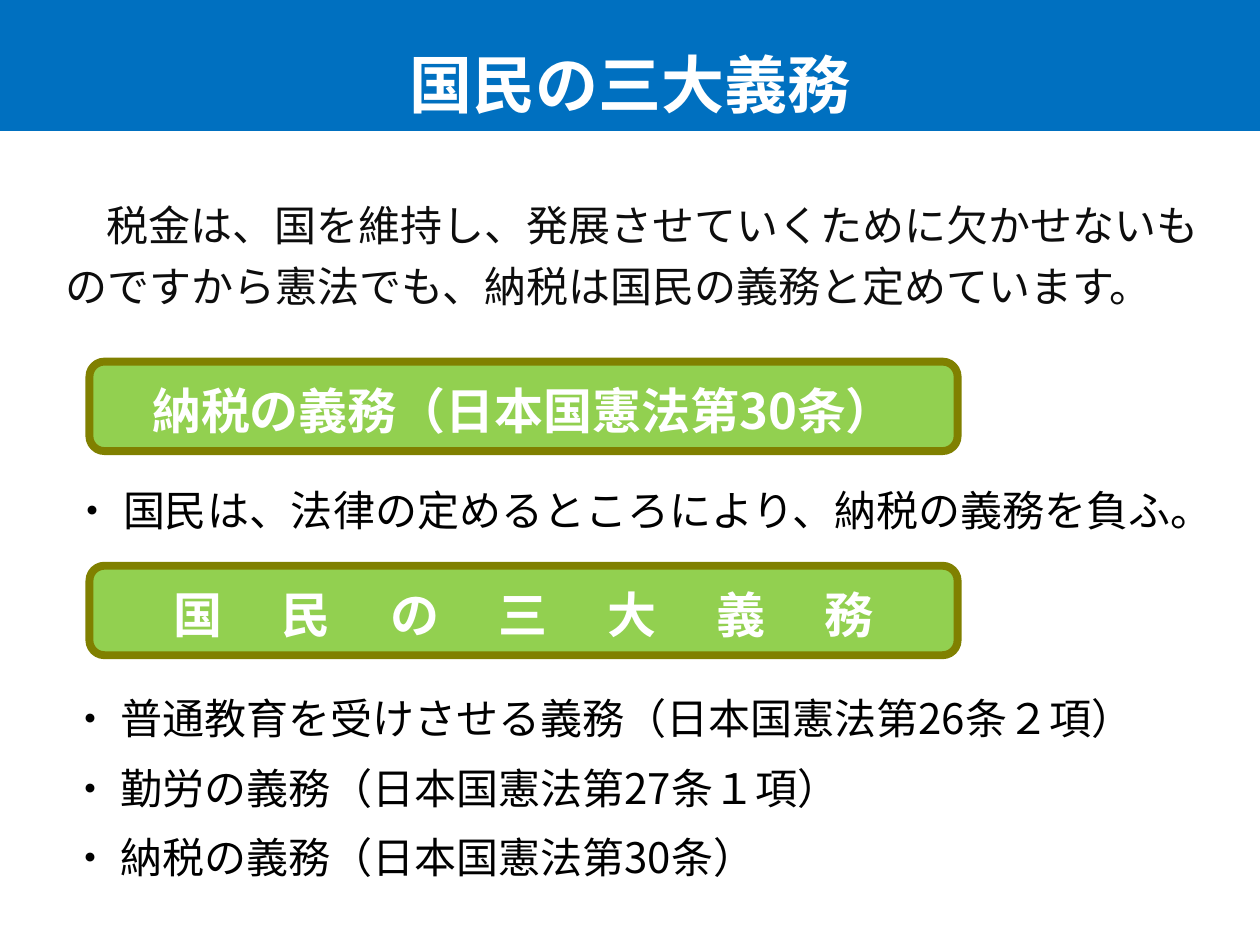
from dataclasses import dataclass

from lxml.etree import SubElement
from pptx import Presentation
from pptx.dml.color import RGBColor
from pptx.enum.shapes import MSO_SHAPE
from pptx.enum.text import MSO_ANCHOR, PP_ALIGN
from pptx.oxml.ns import qn
from pptx.util import Inches, Pt


@dataclass(frozen=True)
class Theme:
    font: str = "Noto Sans CJK JP"
    blue: RGBColor = RGBColor(0x00, 0x70, 0xC0)
    green: RGBColor = RGBColor(0x92, 0xD0, 0x50)
    olive: RGBColor = RGBColor(0x80, 0x80, 0x00)
    white: RGBColor = RGBColor(0xFF, 0xFF, 0xFF)
    black: RGBColor = RGBColor(0x00, 0x00, 0x00)
    dark: RGBColor = RGBColor(0x0D, 0x0D, 0x0D)
    title_size: Pt = Pt(36)
    heading_size: Pt = Pt(28)
    body_size: Pt = Pt(24)
    heading_spacing: Pt = Pt(30)
    body_spacing: Pt = Pt(35)


theme = Theme()


def format_paragraph(paragraph, size, color, line_spacing, bold=False, tracking=0):
    """Style the runs, in Latin and East Asian type; tracking is in hundredths of a point."""
    paragraph.line_spacing = line_spacing
    for run in paragraph.runs:
        run.font.name = theme.font
        run.font.size = size
        run.font.bold = bold
        run.font.color.rgb = color
        properties = run.font._element
        SubElement(properties, qn("a:ea"), typeface=theme.font)
        if tracking:
            properties.set("spc", str(tracking))


def add_body_text(left, top, width, height, lines, color, margin=0, indent=0, space_before=0):
    """Add a wrapped text box; margin and indent are in inches, as in a ruler."""
    shape = slide.shapes.add_textbox(Inches(left), Inches(top), Inches(width), Inches(height))
    text_frame = shape.text_frame
    text_frame.word_wrap = True
    text_frame.text = "\n".join(lines)
    for paragraph in text_frame.paragraphs:
        format_paragraph(paragraph, theme.body_size, color, theme.body_spacing)
        paragraph.space_before = Pt(space_before)
        properties = paragraph._p.get_or_add_pPr()
        properties.set("marL", str(Inches(margin)))
        properties.set("indent", str(Inches(indent)))
    return shape


presentation = Presentation()
presentation.slide_width = Inches(10)
presentation.slide_height = Inches(7.5)
slide = presentation.slides.add_slide(presentation.slide_layouts[6])

# Title band
title = slide.shapes.add_shape(
    MSO_SHAPE.RECTANGLE, Inches(0), Inches(-0.02), Inches(10), Inches(1.06)
)
title.shadow.inherit = False
title.fill.solid()
title.fill.fore_color.rgb = theme.blue
title.line.fill.background()
title.text_frame.word_wrap = True
title.text_frame.vertical_anchor = MSO_ANCHOR.MIDDLE
title.text_frame.text = "国民の三大義務"
title_paragraph = title.text_frame.paragraphs[0]
title_paragraph.alignment = PP_ALIGN.CENTER
format_paragraph(title_paragraph, theme.title_size, theme.white, 1.5, bold=True)

# Introduction
introduction = add_body_text(
    0.42, 1.44, 9.25, 1.08,
    ["税金は、国を維持し、発展させていくために欠かせないものですから憲法でも、納税は国民の義務と定めています。"],
    theme.dark, indent=0.33,
)
introduction.text_frame.vertical_anchor = MSO_ANCHOR.MIDDLE

# Section headings
headings = [
    (2.87, "納税の義務（日本国憲法第30条）", 0),
    (4.49, "国　民　の　三　大　義　務", 310),
]
for top, text, tracking in headings:
    heading = slide.shapes.add_shape(
        MSO_SHAPE.ROUNDED_RECTANGLE, Inches(0.71), Inches(top), Inches(6.89), Inches(0.71)
    )
    heading.shadow.inherit = False
    heading.fill.solid()
    heading.fill.fore_color.rgb = theme.green
    heading.line.color.rgb = theme.olive
    heading.line.width = Pt(4.5)
    text_frame = heading.text_frame
    text_frame.word_wrap = True
    text_frame.margin_top = Inches(0.16)
    text_frame.vertical_anchor = MSO_ANCHOR.MIDDLE
    text_frame.text = text
    paragraph = text_frame.paragraphs[0]
    paragraph.alignment = PP_ALIGN.CENTER
    format_paragraph(
        paragraph, theme.heading_size, theme.white, theme.heading_spacing,
        bold=True, tracking=tracking,
    )

# Text under each heading
add_body_text(
    0, 3.71, 9.65, 0.66,
    ["・ 国民は、法律の定めるところにより、納税の義務を負ふ。"],
    theme.black, margin=0.08, indent=0.39, space_before=10,
)
add_body_text(
    0.45, 5.36, 8.74, 1.61,
    [
        "・ 普通教育を受けさせる義務（日本国憲法第26条２項）",
        "・ 勤労の義務（日本国憲法第27条１項）",
        "・ 納税の義務（日本国憲法第30条）",
    ],
    theme.black, margin=0.38, indent=-0.38, space_before=4.8,
)

presentation.save("out.pptx")
